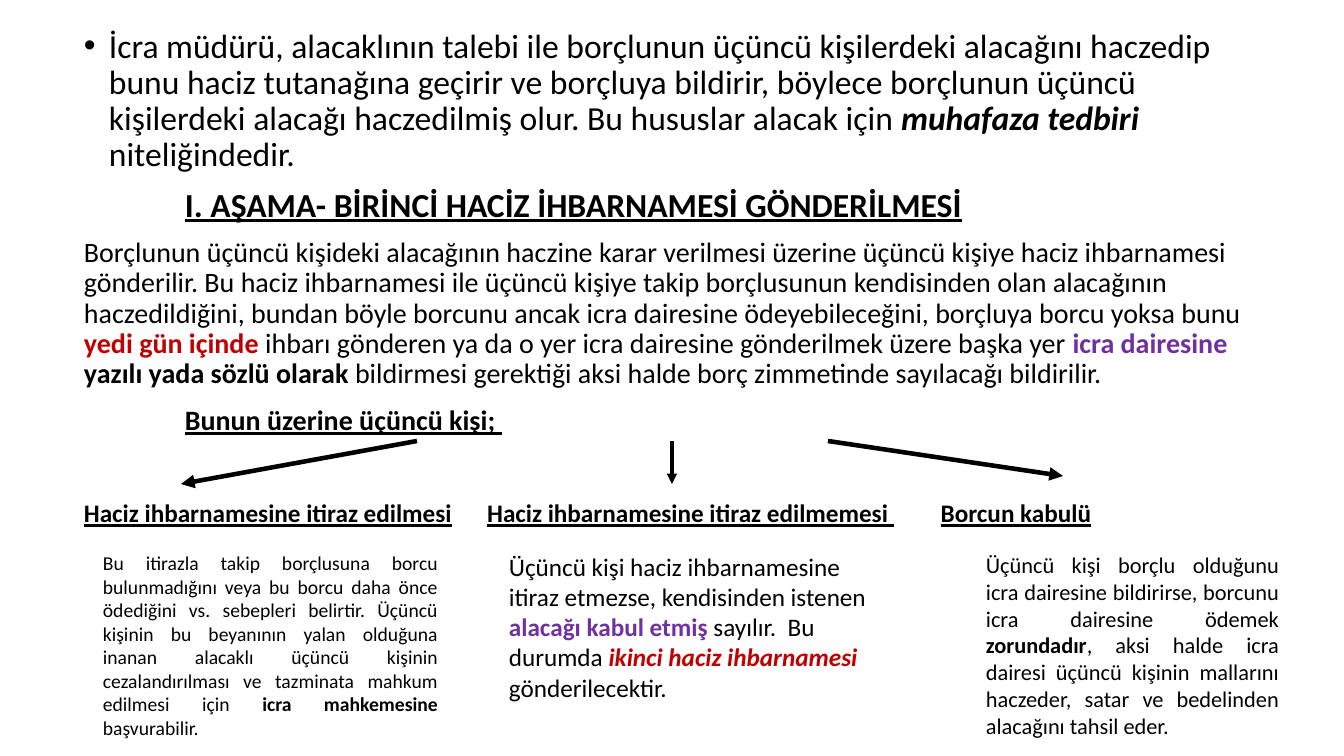
from dataclasses import dataclass

from lxml import etree
from pptx import Presentation
from pptx.dml.color import RGBColor
from pptx.enum.shapes import MSO_CONNECTOR
from pptx.enum.text import PP_ALIGN
from pptx.oxml.ns import qn
from pptx.slide import Slide
from pptx.util import Emu, Pt

LEFT, JUSTIFY = PP_ALIGN.LEFT, PP_ALIGN.JUSTIFY
STRAIGHT = MSO_CONNECTOR.STRAIGHT

FONT = "Calibri"
BLACK = RGBColor(0x00, 0x00, 0x00)
RED = RGBColor(0xC0, 0x00, 0x00)
PURPLE = RGBColor(0x70, 0x30, 0xA0)


def px(n: int) -> Emu:
    return Emu(round(n * 914400 / 100.8))


@dataclass(frozen=True)
class Run:
    text: str
    color: RGBColor = BLACK
    bold: bool = False
    italic: bool = False
    underline: bool = False


@dataclass(frozen=True)
class Para:
    size: int
    runs: list[Run]
    align: PP_ALIGN = LEFT
    line_spacing: float = 1.0
    before: int = 0
    margin: int = 0
    bullet: bool = False
    tabs: tuple[int, ...] = ()


@dataclass(frozen=True)
class Box:
    x: int
    y: int
    w: int
    h: int
    paras: list[Para]


@dataclass(frozen=True)
class Arrow:
    x1: int
    y1: int
    x2: int
    y2: int
    width: float


def heading(text: str) -> Run:
    return Run(text, bold=True, underline=True)


# Main text, ending with the row of three column headings
BODY = Box(74, 24, 1216, 717, [
    Para(24, [
        Run("İcra müdürü, alacaklının talebi ile borçlunun üçüncü kişilerdeki alacağını haczedip "
            "bunu haciz tutanağına geçirir ve borçluya bildirir, böylece borçlunun üçüncü "
            "kişilerdeki alacağı haczedilmiş olur. Bu hususlar alacak için "),
        Run("muhafaza tedbiri ", bold=True, italic=True),
        Run("niteliğindedir."),
    ], line_spacing=0.9, margin=25, bullet=True),
    Para(24, [heading("I. AŞAMA- BİRİNCİ HACİZ İHBARNAMESİ GÖNDERİLMESİ")],
         line_spacing=0.9, before=10, margin=101),
    Para(20, [
        Run("Borçlunun üçüncü kişideki alacağının haczine karar verilmesi üzerine üçüncü kişiye "
            "haciz ihbarnamesi gönderilir. Bu haciz ihbarnamesi ile üçüncü kişiye takip "
            "borçlusunun kendisinden olan alacağının haczedildiğini, bundan böyle borcunu ancak "
            "icra dairesine ödeyebileceğini, borçluya borcu yoksa bunu "),
        Run("yedi gün içinde ", RED, bold=True),
        Run("ihbarı gönderen ya da o yer icra dairesine gönderilmek üzere başka yer "),
        Run("icra dairesine ", PURPLE, bold=True),
        Run("yazılı yada sözlü olarak ", bold=True),
        Run("bildirmesi gerektiği aksi halde borç zimmetinde sayılacağı bildirilir."),
    ], line_spacing=0.9, before=10),
    Para(20, [heading("Bunun üzerine üçüncü kişi; ")],
         line_spacing=0.9, before=12, margin=101),
    Para(18, [
        heading("Haciz ihbarnamesine itiraz edilmesi"), Run("\t"),
        heading("Haciz ihbarnamesine itiraz edilmemesi "), Run("\t"),
        heading("Borcun kabulü"),
    ], line_spacing=0.9, before=46, tabs=(414, 912)),
])

# Explanations below the headings
COLUMNS = [
    Box(93, 546, 355, 201, [Para(14, [
        Run("Bu itirazla takip borçlusuna borcu bulunmadığını veya bu borcu daha önce ödediğini "
            "vs. sebepleri belirtir. Üçüncü kişinin bu beyanının yalan olduğuna inanan alacaklı "
            "üçüncü kişinin cezalandırılması ve tazminata mahkum edilmesi için "),
        Run("icra mahkemesine", bold=True),
        Run(" başvurabilir."),
    ], JUSTIFY)]),
    Box(499, 546, 390, 163, [Para(18, [
        Run("Üçüncü kişi haciz ihbarnamesine itiraz etmezse, kendisinden istenen "),
        Run("alacağı kabul etmiş ", PURPLE, bold=True),
        Run("sayılır.  Bu durumda "),
        Run("ikinci haciz ihbarnamesi ", RED, bold=True, italic=True),
        Run("gönderilecektir."),
    ])]),
    Box(976, 546, 313, 201, [Para(16, [
        Run("Üçüncü kişi borçlu olduğunu icra dairesine bildirirse, borcunu icra dairesine "
            "ödemek "),
        Run("zorundadır", bold=True),
        Run(", aksi halde icra dairesi üçüncü kişinin mallarını haczeder, satar ve bedelinden "
            "alacağını tahsil eder."),
    ], JUSTIFY)]),
]

ARROWS = [
    Arrow(417, 441, 181, 484, 3.25),
    Arrow(672, 441, 672, 484, 2.5),
    Arrow(828, 441, 1063, 476, 3.25),
]


def add_box(s: Slide, box: Box) -> None:
    tf = s.shapes.add_textbox(px(box.x), px(box.y), px(box.w), px(box.h)).text_frame
    tf.word_wrap = True
    for i, para in enumerate(box.paras):
        p = tf.add_paragraph() if i else tf.paragraphs[0]
        p.alignment = para.align
        p.line_spacing = para.line_spacing
        p.space_before = Pt(para.before)
        p.font.name, p.font.size = FONT, Pt(para.size)
        for run in para.runs:
            r = p.add_run()
            r.text = run.text
            r.font.name, r.font.size = FONT, Pt(para.size)
            r.font.color.rgb = run.color
            r.font.bold, r.font.italic = run.bold, run.italic
            r.font.underline = run.underline
        set_indents(p._p.get_or_add_pPr(), para)


def set_indents(props: etree._Element, para: Para) -> None:
    """Set margin, bullet and tab stops, which must precede the default run properties."""
    props.set("marL", str(px(para.margin)))
    props.set("indent", str(-px(para.margin) if para.bullet else 0))
    extras = []
    if para.bullet:
        font = etree.Element(qn("a:buFont"), typeface="Arial")
        extras += [font, etree.Element(qn("a:buChar"), char="•")]
    if para.tabs:
        stops = etree.Element(qn("a:tabLst"))
        for tab in para.tabs:
            etree.SubElement(stops, qn("a:tab"), pos=str(px(tab)), algn="l")
        extras.append(stops)
    defaults = props.find(qn("a:defRPr"))
    for extra in extras:
        defaults.addprevious(extra)


def add_arrow(s: Slide, arrow: Arrow) -> None:
    c = s.shapes.add_connector(STRAIGHT, px(arrow.x1), px(arrow.y1), px(arrow.x2), px(arrow.y2))
    c.line.color.rgb = BLACK
    c.line.width = Pt(arrow.width)
    etree.SubElement(c.line._get_or_add_ln(), qn("a:tailEnd"), type="triangle")
    etree.SubElement(c._element.spPr, qn("a:effectLst"))


def main() -> None:
    prs = Presentation()
    prs.slide_width, prs.slide_height = px(1344), px(756)
    s = prs.slides.add_slide(prs.slide_layouts[6])
    add_box(s, BODY)
    for arrow in ARROWS:
        add_arrow(s, arrow)
    for column in COLUMNS:
        add_box(s, column)
    prs.save("out.pptx")


if __name__ == "__main__":
    main()
